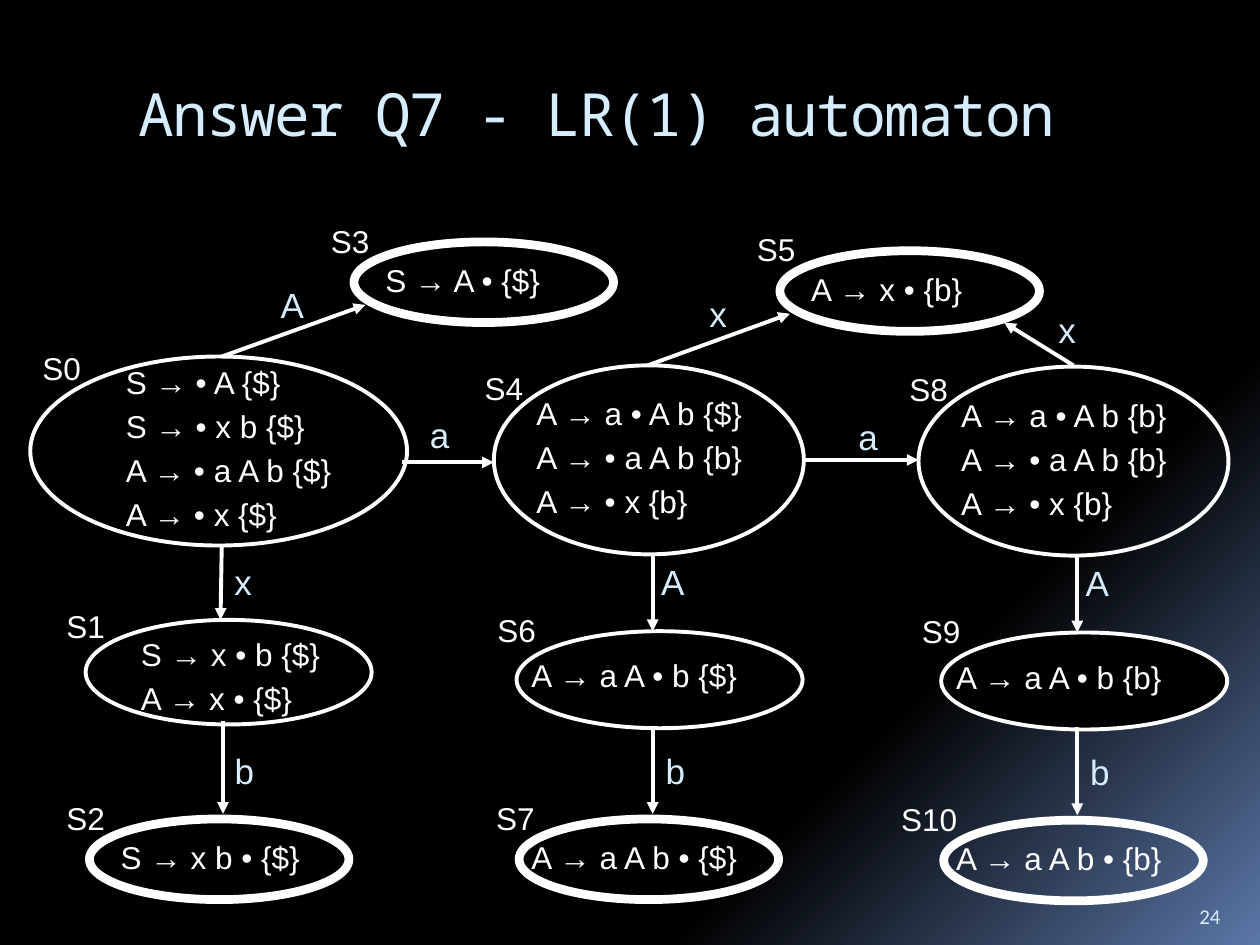
import pptx
import pptx.dml.color
import pptx.enum.shapes
import pptx.enum.text
import pptx.oxml.ns
import pptx.util
from lxml import etree

ALIGN = pptx.enum.text.PP_ALIGN
ANCHOR = pptx.enum.text.MSO_ANCHOR
WHITE, BLACK, PALE = "FFFFFF", "000000", "D6ECFF"

# Grid of 100 columns by 75 rows over the slide
WIDTH, HEIGHT = pptx.util.Inches(10), pptx.util.Inches(7.5)
COLUMNS, ROWS = 100, 75
NAME_WIDTH, SYMBOL_WIDTH = 8, 4
FRAME = {"word_wrap": True, "vertical_anchor": ANCHOR.TOP}
ITEM = {"size": pptx.util.Pt(18), "name": "Arial"}
SYMBOL = {"size": pptx.util.Pt(20), "name": "Arial"}
TITLE = {"size": pptx.util.Pt(34), "name": "Noto Sans Mono"}
NUMBER = {"size": pptx.util.Pt(12), "name": "Calibri"}


def colour(hex_string):
    return pptx.dml.color.RGBColor.from_string(hex_string)


def apply(target, values):
    for key, value in values.items():
        setattr(target, key, value)


def grid(*lengths):
    """Turn alternating columns and rows into slide lengths."""
    units = (WIDTH / COLUMNS, HEIGHT / ROWS)
    return [round(length * units[i % 2]) for i, length in enumerate(lengths)]


def write(frame, lines, font, text_colour, align=ALIGN.LEFT, **frame_format):
    apply(frame, {**FRAME, **frame_format})
    for i, line in enumerate(lines):
        paragraph = frame.paragraphs[0] if i == 0 else frame.add_paragraph()
        paragraph.alignment = align
        paragraph.space_before = pptx.util.Pt(3.6 if i else 0)
        run = paragraph.add_run()
        run.text = line
        apply(run.font, font)
        run.font.color.rgb = colour(text_colour)


def text(slide, box, lines, font, text_colour, **options):
    frame = slide.shapes.add_textbox(*grid(*box)).text_frame
    write(frame, lines, font, text_colour, **options)


def state(slide, box, name, items, name_at, items_at, final=False, fill=BLACK):
    """An oval with its items, and its name centred under name_at."""
    left, top, width, height = box
    oval = slide.shapes.add_shape(
        pptx.enum.shapes.MSO_SHAPE.OVAL, *grid(*box))
    oval.shadow.inherit = False
    if final or fill is None:
        oval.fill.background()
    else:
        oval.fill.solid()
        oval.fill.fore_color.rgb = colour(fill)
    oval.line.color.rgb = colour(WHITE)
    oval.line.width = pptx.util.Pt(5 if final else 2.25)
    text(slide, (left + name_at[0] - NAME_WIDTH / 2, top + name_at[1],
                 NAME_WIDTH, 4), [name], ITEM, WHITE, align=ALIGN.CENTER)
    text(slide, (left + items_at[0], top + items_at[1], 22, 4.4 * len(items)),
         items, ITEM, WHITE)


def final_state(slide, left, top, name, item, indent=1.5, name_column=-0.3):
    state(slide, (left, top, 20.6, 6.4), name, [item],
          (name_column, -2.1), (indent, 1), final=True)


def transition(slide, start, end, symbol, symbol_at):
    """An arrow, with its symbol centred under symbol_at."""
    arrow = slide.shapes.add_connector(
        pptx.enum.shapes.MSO_CONNECTOR.STRAIGHT, *grid(*start, *end))
    arrow.line.color.rgb = colour(WHITE)
    arrow.line.width = pptx.util.Pt(2.25)
    qn = pptx.oxml.ns.qn
    properties = arrow._element.spPr
    etree.SubElement(properties.get_or_add_ln(), qn("a:tailEnd"),
                     type="triangle")
    etree.SubElement(properties, qn("a:effectLst"))
    text(slide, (symbol_at[0] - SYMBOL_WIDTH / 2, symbol_at[1],
                 SYMBOL_WIDTH, 4.3), [symbol], SYMBOL, PALE,
         align=ALIGN.CENTER)


def start_column(slide, left, top):
    """S0 and the states that x and b lead to."""
    state(slide, (left, top, 29.9, 15), "S0",
          ["S → • A {$}", "S → • x b {$}", "A → • a A b {$}", "A → • x {$}"],
          (2.5, -1.1), (6.6, 0))
    state(slide, (left + 4.4, top + 20.9, 22.7, 8.3), "S1",
          ["S → x • b {$}", "A → x • {$}"], (0, -1.5), (3.4, 0.7))
    final_state(slide, left + 4.7, top + 36.7, "S2", "S → x b • {$}")
    transition(slide, (left + 15.2, top + 15), (left + 15.1, top + 20.9),
               "x", (left + 16.9, top + 15.7))
    transition(slide, (left + 15.3, top + 28.9), (left + 15.3, top + 36.3),
               "b", (left + 17, top + 30.7))


def nested_column(slide, left, top, names, lookahead, fill=BLACK,
                  name_column=-0.3):
    """The states reached by a, then A, then b, for one lookahead."""
    opened, reduced, closed = names
    state(slide, (left, top, 24.6, 15), opened,
          [f"A → a • A b {{{lookahead}}}", "A → • a A b {b}", "A → • x {b}"],
          (0.8, -0.2), (2.4, 1.8), fill=fill)
    state(slide, (left + 1.8, top + 21.1, 22.7, 7.7), reduced,
          [f"A → a A • b {{{lookahead}}}"], (0, -2.1), (0.2, 1.5))
    final_state(slide, left + 2, top + 36, closed,
                f"A → a A b • {{{lookahead}}}", 0, name_column)
    axis = left + 12.6
    transition(slide, (axis, top + 15), (axis, top + 21.1),
               "A", (axis + 1.6, top + 15))
    transition(slide, (axis, top + 28.6), (axis, top + 35.6),
               "b", (axis + 1.8, top + 30))


def automaton(slide):
    start_column(slide, 2.4, 28.3)
    nested_column(slide, 39.2, 29, ("S4", "S6", "S7"), "$")
    nested_column(slide, 72.9, 29.1, ("S8", "S9", "S10"), "b",
                  fill=None, name_column=-1.15)
    final_state(slide, 28.1, 19.2, "S3", "S → A • {$}")
    final_state(slide, 61.9, 19.9, "S5", "A → x • {b}")
    # Transitions between the columns and up to the top row
    for start, end, symbol, symbol_at in (
            ((17.6, 28.3), (29, 24.2), "A", (23.2, 22)),
            ((51.4, 29), (62.7, 24.9), "x", (57, 22.7)),
            ((85.2, 29), (79.7, 25.6), "x", (84.7, 24)),
            ((31.9, 36.7), (39.2, 36.7), "a", (34.9, 32.3)),
            ((63.7, 36.5), (72.9, 36.5), "a", (68.9, 32.5))):
        transition(slide, start, end, symbol, symbol_at)


def background(slide):
    fill = slide.background.fill
    fill.gradient()
    fill.gradient_angle = 315
    for stop, position, shade in zip(
            fill.gradient_stops, (0.73, 1), (BLACK, "5B77A8")):
        stop.position = position
        stop.color.rgb = colour(shade)


def heading(slide, box):
    title = slide.shapes.title
    apply(title, dict(zip(("left", "top", "width", "height"), grid(*box))))
    write(title.text_frame, ["Answer Q7 - LR(1) automaton"], TITLE, PALE)
    title.text_frame.paragraphs[0].runs[0].font._element.set("spc", "-100")


def main():
    deck = pptx.Presentation()
    apply(deck, {"slide_width": WIDTH, "slide_height": HEIGHT})
    slide = deck.slides.add_slide(deck.slide_layouts[5])
    background(slide)
    heading(slide, (10, 5.6, 85, 10))
    automaton(slide)
    # Slide number
    text(slide, (94.2, 70.2, 5, 4), ["24"], NUMBER, PALE,
         vertical_anchor=ANCHOR.BOTTOM)
    deck.save("out.pptx")


if __name__ == "__main__":
    main()
